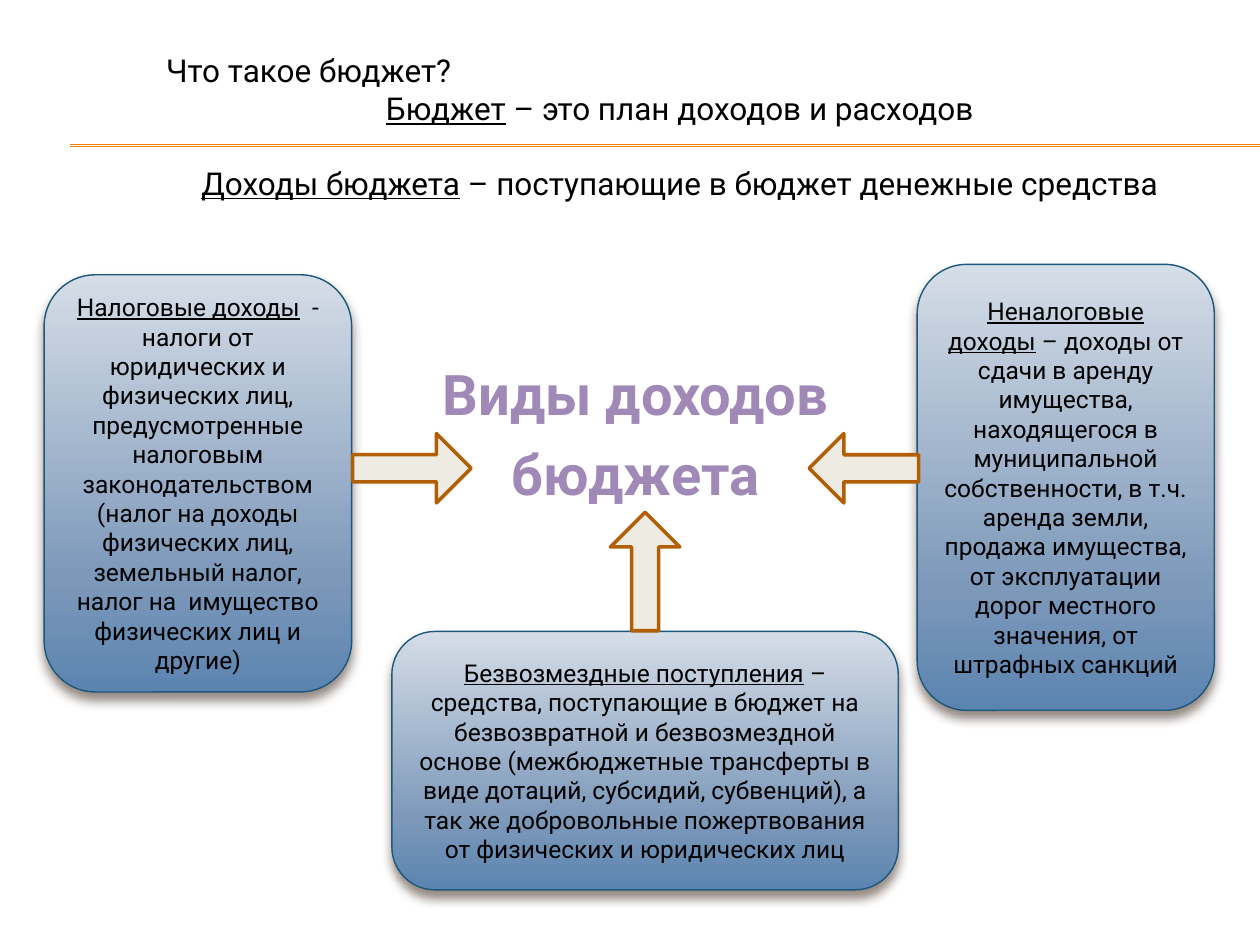
from pptx import Presentation
from pptx.dml.color import RGBColor
from pptx.enum.shapes import MSO_CONNECTOR, MSO_SHAPE
from pptx.enum.text import MSO_ANCHOR, PP_ALIGN
from pptx.oxml import parse_xml
from pptx.oxml.ns import nsdecls
from pptx.util import Cm, Pt

STRAIGHT = MSO_CONNECTOR.STRAIGHT
ROUNDED = MSO_SHAPE.ROUNDED_RECTANGLE
RIGHT_ARROW = MSO_SHAPE.RIGHT_ARROW
LEFT, CENTER = PP_ALIGN.LEFT, PP_ALIGN.CENTER
MIDDLE = MSO_ANCHOR.MIDDLE

GRADIENT_STOPS = [(0, "D5DDE7"), (72, "7D99BA"), (100, "5B84B0")]


def color(hex_string):
    return RGBColor.from_string(hex_string)


def gradient_xml():
    stops = "".join(
        f'<a:gs pos="{position * 1000}"><a:srgbClr val="{value}"/></a:gs>'
        for position, value in GRADIENT_STOPS
    )
    return (
        f'<a:gradFill {nsdecls("a")} rotWithShape="1"><a:gsLst>{stops}</a:gsLst>'
        '<a:lin ang="5400000" scaled="0"/></a:gradFill>'
    )


def shadow_xml():
    return (
        f'<a:effectLst {nsdecls("a")}><a:outerShdw blurRad="{Pt(6)}" dist="{Pt(4)}" '
        'dir="5400000" rotWithShape="0"><a:srgbClr val="4E3B30">'
        '<a:alpha val="60000"/></a:srgbClr></a:outerShdw></a:effectLst>'
    )


class BudgetSlide:
    """Draws the elements of the budget slide in one shared style."""

    font_name = "Roboto"
    text_color = "000000"
    rule_color = "F07F09"
    heading_color = "A088B7"
    card_line = "1B587C"
    arrow_fill = "EEEBE3"
    arrow_line = "B25E07"

    def __init__(self, presentation):
        self.slide = presentation.slides.add_slide(presentation.slide_layouts[6])

    def format_run(self, run, size, hex_string, bold=False, underline=False):
        run.font.name = self.font_name
        run.font.size = Pt(size)
        run.font.bold = bold
        run.font.underline = underline
        run.font.color.rgb = color(hex_string)

    def definition(self, paragraph, term, meaning, size):
        paragraph.alignment = CENTER
        paragraph.text = term
        paragraph.add_run().text = meaning
        for run, underline in zip(paragraph.runs, (True, False)):
            self.format_run(run, size, self.text_color, underline=underline)

    def text_box(self, left, top, width, height):
        shape = self.slide.shapes.add_textbox(Cm(left), Cm(top), Cm(width), Cm(height))
        shape.text_frame.word_wrap = True
        return shape.text_frame

    def rule(self, left, right, top):
        line = self.slide.shapes.add_connector(
            STRAIGHT, Cm(left), Cm(top), Cm(right), Cm(top)
        )
        line.line.color.rgb = color(self.rule_color)
        line.line.width = Pt(0.75)
        line._element.spPr.append(parse_xml(f'<a:effectLst {nsdecls("a")}/>'))

    def heading(self, left, top, width, height, lines):
        text_frame = self.text_box(left, top, width, height)
        text_frame.margin_top = Cm(1.7)
        text_frame.text = "\n".join(lines)
        for index, paragraph in enumerate(text_frame.paragraphs):
            paragraph.alignment = CENTER
            paragraph.space_before = Pt(7.5 if index else 0)
            self.format_run(paragraph.runs[0], 32, self.heading_color, bold=True)

    def introduction(self, left, top, width, height, question, definitions):
        text_frame = self.text_box(left, top, width, height)
        text_frame.text = question
        text_frame.paragraphs[0].alignment = LEFT
        self.format_run(text_frame.paragraphs[0].runs[0], 18, self.text_color)
        for index, (term, meaning) in enumerate(definitions):
            paragraph = text_frame.add_paragraph()
            paragraph.space_before = Pt(21 * index)
            self.definition(paragraph, term, meaning, 18)

    def card(self, left, top, width, height, term, meaning):
        shape = self.slide.shapes.add_shape(
            ROUNDED, Cm(left), Cm(top), Cm(width), Cm(height)
        )
        shape.line.color.rgb = color(self.card_line)
        shape.line.width = Pt(0.79)
        properties = shape._element.spPr
        properties.insert(2, parse_xml(gradient_xml()))
        properties.append(parse_xml(shadow_xml()))
        shape.text_frame.word_wrap = True
        shape.text_frame.vertical_anchor = MIDDLE
        self.definition(shape.text_frame.paragraphs[0], term, meaning, 14)

    def arrow(self, left, top, width, rotation):
        shape = self.slide.shapes.add_shape(
            RIGHT_ARROW, Cm(left), Cm(top), Cm(width), Cm(1.4)
        )
        shape.adjustments[0] = 0.39
        shape.rotation = rotation
        shape.shadow.inherit = False
        shape.fill.solid()
        shape.fill.fore_color.rgb = color(self.arrow_fill)
        shape.line.color.rgb = color(self.arrow_line)
        shape.line.width = Pt(2)


def main():
    presentation = Presentation()
    presentation.slide_width = Cm(25.4)
    presentation.slide_height = Cm(19.05)
    budget = BudgetSlide(presentation)

    for top in (2.92, 2.95):
        budget.rule(1.42, 25.4, top)
    budget.heading(0.71, 5.54, 24.21, 11.99, ["Виды доходов", "бюджета"])
    budget.introduction(
        3.1, 0.91, 21.21, 3.33,
        "Что такое бюджет?",
        [
            ("Бюджет", " – это план доходов и расходов"),
            ("Доходы бюджета", " – поступающие в бюджет денежные средства"),
        ],
    )
    budget.card(
        18.49, 5.33, 5.99, 8.99,
        "Неналоговые доходы",
        " – доходы от сдачи в аренду имущества, находящегося в муниципальной "
        "собственности, в т.ч. аренда земли, продажа имущества, от эксплуатации "
        "дорог местного значения, от штрафных санкций",
    )
    budget.card(
        0.89, 5.54, 6.2, 8.41,
        "Налоговые доходы",
        "  - налоги от юридических и физических лиц, предусмотренные налоговым "
        "законодательством (налог на доходы физических лиц, земельный налог, "
        "налог на  имущество физических лиц и другие)",
    )
    budget.card(
        7.9, 12.73, 10.21, 5.21,
        "Безвозмездные поступления",
        " – средства, поступающие в бюджет на безвозвратной и безвозмездной "
        "основе (межбюджетные трансферты в виде дотаций, субсидий, субвенций), "
        "а так же добровольные пожертвования от физических и юридических лиц",
    )
    budget.arrow(16.31, 8.74, 2.21, 180)
    budget.arrow(7.11, 8.74, 2.39, 0)
    budget.arrow(11.81, 10.82, 2.39, 270)

    presentation.save("out.pptx")


if __name__ == "__main__":
    main()
